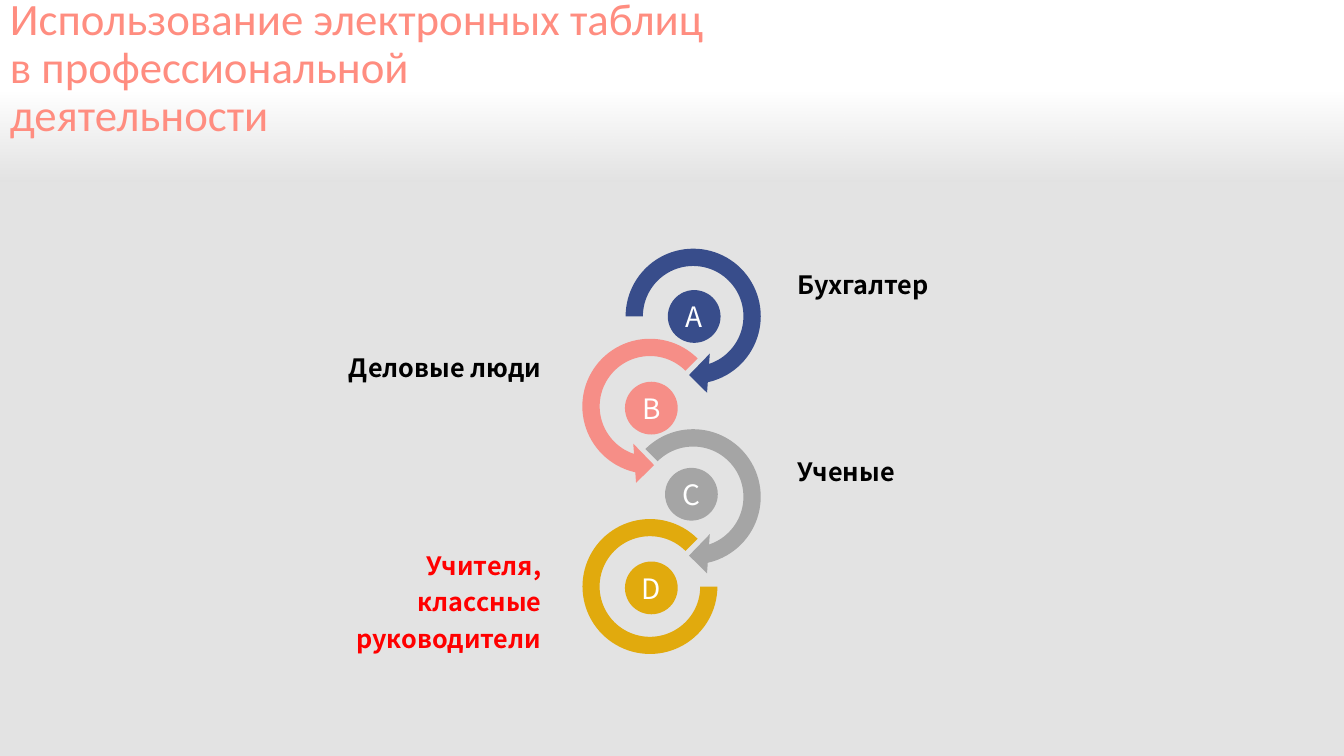
"""Build a slide on who uses spreadsheets, with a chain of four lettered arrows."""
from dataclasses import dataclass

from lxml import etree
from pptx import Presentation
from pptx.dml.color import RGBColor
from pptx.enum.shapes import MSO_SHAPE
from pptx.enum.text import MSO_ANCHOR, PP_ALIGN
from pptx.oxml.ns import qn
from pptx.util import Cm, Pt

RECTANGLE, OVAL = MSO_SHAPE.RECTANGLE, MSO_SHAPE.OVAL
RIGHT_ARROW, LEFT_ARROW = MSO_SHAPE.CIRCULAR_ARROW, MSO_SHAPE.LEFT_CIRCULAR_ARROW
ARC = MSO_SHAPE.BLOCK_ARC
MIDDLE = MSO_ANCHOR.MIDDLE
LEFT, RIGHT = PP_ALIGN.LEFT, PP_ALIGN.RIGHT
CENTER, JUSTIFY = PP_ALIGN.CENTER, PP_ALIGN.JUSTIFY


@dataclass(frozen=True)
class Theme:
    title_font: str = "Calibri"
    body_font: str = "Noto Sans CJK SC"
    title_size: int = 32
    badge_size: int = 20
    label_size: int = 18
    title: str = "FF8D80"
    backdrop: str = "E3E3E3"
    white: str = "FFFFFF"
    black: str = "000000"
    red: str = "FF0000"
    blue: str = "384D8B"
    coral: str = "F68E87"
    gray: str = "A5A5A5"
    gold: str = "E1AA0D"


theme = Theme()


def add_filled(shapes, kind, box, color):
    shape = shapes.add_shape(kind, *[Cm(length) for length in box])
    shape.shadow.inherit = False
    shape.fill.solid()
    shape.fill.fore_color.rgb = RGBColor.from_string(color)
    shape.line.fill.background()
    return shape


def write(shape, text, font, size, color, align, spacing=1.0, bold=False):
    shape.text_frame.text = text
    paragraph = shape.text_frame.paragraphs[0]
    paragraph.alignment = align
    paragraph.line_spacing = spacing
    for run in paragraph.runs:
        run.font.name = font
        run.font.size = Pt(size)
        run.font.bold = bold
        run.font.color.rgb = RGBColor.from_string(color)
        east_asian = etree.SubElement(run.font._element, qn("a:ea"))
        east_asian.set("typeface", font)


presentation = Presentation()
presentation.slide_width = Cm(33.87)
presentation.slide_height = Cm(19.05)
slide = presentation.slides.add_slide(presentation.slide_layouts[6])

fade = add_filled(slide.shapes, RECTANGLE, (0, 2.34, 33.87, 2.23), theme.backdrop)
fade.fill.gradient()
fade.fill.gradient_angle = 270
for stop, position in zip(fade.fill.gradient_stops, (0, 1)):
    stop.position = position
    stop.color.rgb = RGBColor.from_string(theme.backdrop)
first_color = fade._element.spPr.find(".//" + qn("a:srgbClr"))
etree.SubElement(first_color, qn("a:alpha")).set("val", "0")
add_filled(slide.shapes, RECTANGLE, (0, 4.57, 33.87, 14.48), theme.backdrop)

title = slide.shapes.add_textbox(Cm(0), Cm(0.43), Cm(30.38), Cm(2.62))
title.text_frame.word_wrap = True
title.text_frame.vertical_anchor = MIDDLE
write(title, "Использование электронных таблиц \vв профессиональной \vдеятельности",
      theme.title_font, theme.title_size, theme.title, LEFT, 0.9)

ARROW, RING, BADGE = 3.96, 3.4, 1.33
links = [
    ("C", theme.gray, RIGHT_ARROW, (15.49, 10.54, ARROW),
     (0.11, 11.423, 45, 135, 0.125), (16.76, 11.79)),
    ("D", theme.gold, ARC, (14.68, 13.08, RING), (0, 189, 0.127), (15.75, 14.15)),
    ("B", theme.coral, LEFT_ARROW, (14.4, 8.26, ARROW),
     (0.11, 11.423, 63, 189, 0.125), (15.75, 9.62)),
    ("A", theme.blue, RIGHT_ARROW, (15.49, 5.99, ARROW),
     (0.11, 11.423, 45, 108, 0.125), (16.83, 7.31)),
]
chain = slide.shapes.add_group_shape()
for letter, color, kind, (left, top, size), adjustments, corner in links:
    arrow = add_filled(chain.shapes, kind, (left, top, size, size), color)
    for index, value in enumerate(adjustments):
        arrow.adjustments[index] = value
    badge = add_filled(chain.shapes, OVAL, (*corner, BADGE, BADGE), color)
    frame = badge.text_frame
    frame.margin_left = frame.margin_right = frame.margin_top = frame.margin_bottom = 0
    frame.word_wrap = False
    frame.vertical_anchor = MIDDLE
    write(badge, letter, theme.body_font, theme.badge_size, theme.white, CENTER)

labels = [
    ("Бухгалтер", 19.86, 6.5, 1.14, JUSTIFY, theme.black),
    ("Ученые", 19.86, 11.23, 1.14, JUSTIFY, theme.black),
    ("Деловые люди", 7.67, 8.61, 1.14, RIGHT, theme.black),
    ("Учителя, классные руководители", 7.67, 13.59, 3.02, RIGHT, theme.red),
]
for text, left, top, height, align, color in labels:
    label = slide.shapes.add_textbox(Cm(left), Cm(top), Cm(6.22), Cm(height))
    label.text_frame.word_wrap = True
    write(label, text, theme.body_font, theme.label_size, color, align, 1.2, True)

presentation.save("out.pptx")
